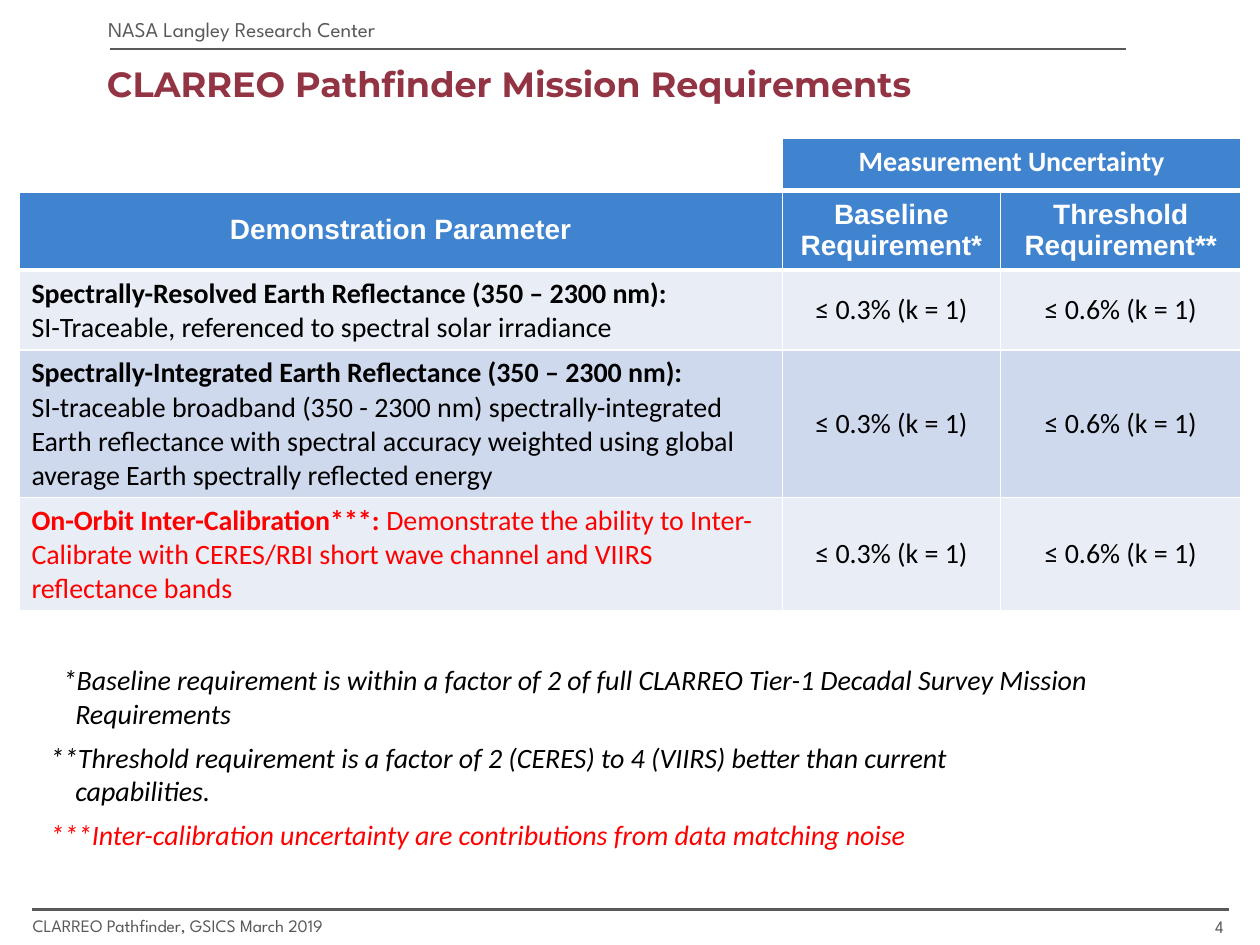
import pptx
import pptx.dml.color
import pptx.enum.shapes
import pptx.enum.text
import pptx.util
from lxml import etree

CENTER = pptx.enum.text.PP_ALIGN.CENTER
RIGHT = pptx.enum.text.PP_ALIGN.RIGHT
MIDDLE = pptx.enum.text.MSO_ANCHOR.MIDDLE
TOP = pptx.enum.text.MSO_ANCHOR.TOP
DRAWING = "http://schemas.openxmlformats.org/drawingml/2006/main"


def color(hex_string):
    return pptx.dml.color.RGBColor.from_string(hex_string)


class SlideBuilder:
    """Places elements on a grid of 100 columns by 75 rows."""

    GRAY, MAROON, RED = "595959", "933444", "FF0000"
    BLACK, WHITE, BLUE = "000000", "FFFFFF", "4083CF"
    BANDS = ("E8EDF6", "CFD9ED")
    LABEL, TITLE, BODY, HEADER = "League Spartan", "Montserrat", "Calibri", "Arial"

    def __init__(self, presentation):
        self.column = presentation.slide_width / 100
        self.row = presentation.slide_height / 75
        self.slide = presentation.slides.add_slide(presentation.slide_layouts[6])

    def place(self, left, top, width, height):
        return (round(left * self.column), round(top * self.row),
                round(width * self.column), round(height * self.row))

    def style(self, paragraph, font, size, tint, bold=False, italic=False, align=None):
        paragraph.font.name = font
        paragraph.font.size = pptx.util.Pt(size)
        paragraph.font.bold = bold
        paragraph.font.italic = italic
        paragraph.font.color.rgb = color(tint)
        paragraph.alignment = align

    def text(self, box, content, *style, wrap=True, anchor=TOP, margin=None, **options):
        frame = self.slide.shapes.add_textbox(*self.place(*box)).text_frame
        frame.word_wrap = wrap
        frame.vertical_anchor = anchor
        if margin is not None:
            frame.margin_left = frame.margin_right = margin
            frame.margin_top = frame.margin_bottom = margin
        frame.text = content
        self.style(frame.paragraphs[0], *style, **options)

    def rule(self, left, right, top):
        x, y, length, _ = self.place(left, top, right - left, 0)
        line = self.slide.shapes.add_connector(
            pptx.enum.shapes.MSO_CONNECTOR.STRAIGHT, x, y, x + length, y)
        line.line.color.rgb = color(self.GRAY)
        line.line.width = pptx.util.Pt(1.5)
        etree.SubElement(line._element.spPr, f"{{{DRAWING}}}effectLst")

    def notes(self, box, entries):
        """Footnotes with hanging indents; each entry is text, first-line outdent, colour."""
        frame = self.slide.shapes.add_textbox(*self.place(*box)).text_frame
        frame.word_wrap = True
        frame.text = "\n".join(content for content, _, _ in entries)
        for paragraph, (_, outdent, tint) in zip(frame.paragraphs, entries):
            properties = paragraph._p.get_or_add_pPr()
            properties.set("marL", str(round(2 * self.column)))
            properties.set("indent", str(round(-outdent * self.column)))
            paragraph.space_after = pptx.util.Pt(6)
            self.style(paragraph, self.BODY, 16, tint, italic=True)

    def table(self, box, widths, heights):
        table = self.slide.shapes.add_table(
            len(heights), len(widths), *self.place(*box)).table
        table.first_row = table.horz_banding = False
        for column, width in zip(table.columns, widths):
            column.width = round(width * self.column)
        for row, height in zip(table.rows, heights):
            row.height = round(height * self.row)
        return table

    def cell(self, cell, content, fill, font, tint, bold=False, align=CENTER, anchor=MIDDLE):
        cell.fill.solid()
        cell.fill.fore_color.rgb = color(fill)
        cell.vertical_anchor = anchor
        cell.text = content
        self.style(cell.text_frame.paragraphs[0], font, 16, tint, bold, align=align)

    def parameter(self, cell, lead, detail, fill, tint, new_line):
        """A bold lead followed by regular detail text."""
        self.cell(cell, "", fill, self.BODY, tint, align=None, anchor=TOP)
        paragraph = cell.text_frame.paragraphs[0]
        run = paragraph.add_run()
        run.text = lead
        run.font.bold = True
        if new_line:
            paragraph.add_line_break()
        paragraph.add_run().text = detail if new_line else " " + detail

    def border(self, cell, side, width):
        line = etree.Element(f"{{{DRAWING}}}{side}", w=str(pptx.util.Pt(width)))
        fill = etree.SubElement(line, f"{{{DRAWING}}}solidFill")
        etree.SubElement(fill, f"{{{DRAWING}}}srgbClr", val=self.WHITE)
        cell._tc.get_or_add_tcPr().insert(0, line)


def main():
    presentation = pptx.Presentation()
    presentation.slide_width = pptx.util.Inches(10)
    presentation.slide_height = pptx.util.Inches(7.5)
    page = SlideBuilder(presentation)

    page.text((94.9, 72.7, 2.2, 1.7), "4", page.LABEL, 10, page.GRAY,
              align=RIGHT, margin=0)
    page.text((1.6, 72.1, 30.1, 2.7), "CLARREO Pathfinder, GSICS March 2019",
              page.LABEL, 10, page.GRAY, wrap=False)
    page.text((7.6, 0.8, 28.2, 3), "NASA Langley Research Center",
              page.LABEL, 12, page.GRAY, wrap=False)
    page.rule(8.7, 89.4, 3.9)
    page.rule(2.5, 97.5, 72.2)
    page.text((7.5, 3.1, 82.5, 7.1), "CLARREO Pathfinder Mission Requirements",
              page.TITLE, 20, page.MAROON, bold=True, anchor=MIDDLE)

    table = page.table((1.5, 11, 97, 37.4), (60.6, 17.3, 19.1), (4.1, 6.3, 6.3, 11.7, 9))
    table.cell(0, 0).fill.background()
    table.cell(0, 1).merge(table.cell(0, 2))
    page.cell(table.cell(0, 1), "Measurement Uncertainty", page.BLUE, page.BODY,
              page.WHITE, bold=True, anchor=TOP)
    headings = ("Demonstration Parameter", "Baseline Requirement*", "Threshold Requirement**")
    for index, heading in enumerate(headings):
        page.cell(table.cell(1, index), heading, page.BLUE, page.HEADER, page.WHITE, bold=True)
        page.border(table.cell(0, index), "lnB", 3)
        page.border(table.cell(1, index), "lnT", 3)

    parameters = (
        ("Spectrally-Resolved Earth Reflectance (350 – 2300 nm):",
         "SI-Traceable, referenced to spectral solar irradiance", page.BLACK, True),
        ("Spectrally-Integrated Earth Reflectance (350 – 2300 nm):",
         "SI-traceable broadband (350 - 2300 nm) spectrally-integrated Earth reflectance "
         "with spectral accuracy weighted using global average Earth spectrally "
         "reflected energy", page.BLACK, True),
        ("On-Orbit Inter-Calibration***:",
         "Demonstrate the ability to Inter-Calibrate with CERES/RBI short wave channel "
         "and VIIRS reflectance bands", page.RED, False),
    )
    for index, (lead, detail, tint, new_line) in enumerate(parameters):
        fill = page.BANDS[index % 2]
        page.parameter(table.cell(index + 2, 0), lead, detail, fill, tint, new_line)
        for column, limit in enumerate(("0.3%", "0.6%"), start=1):
            page.cell(table.cell(index + 2, column), f"≤ {limit} (k = 1)",
                      fill, page.BODY, page.BLACK)

    page.notes((3, 52.1, 97, 16.2), (
        ("*Baseline requirement is within a factor of 2 of full CLARREO Tier-1 "
         "Decadal Survey Mission\vRequirements", 1, page.BLACK),
        ("**Threshold requirement is a factor of 2 (CERES) to 4 (VIIRS) better "
         "than current\vcapabilities.", 2, page.BLACK),
        ("***Inter-calibration uncertainty are contributions from data matching noise",
         2, page.RED),
    ))
    presentation.save("out.pptx")


if __name__ == "__main__":
    main()
